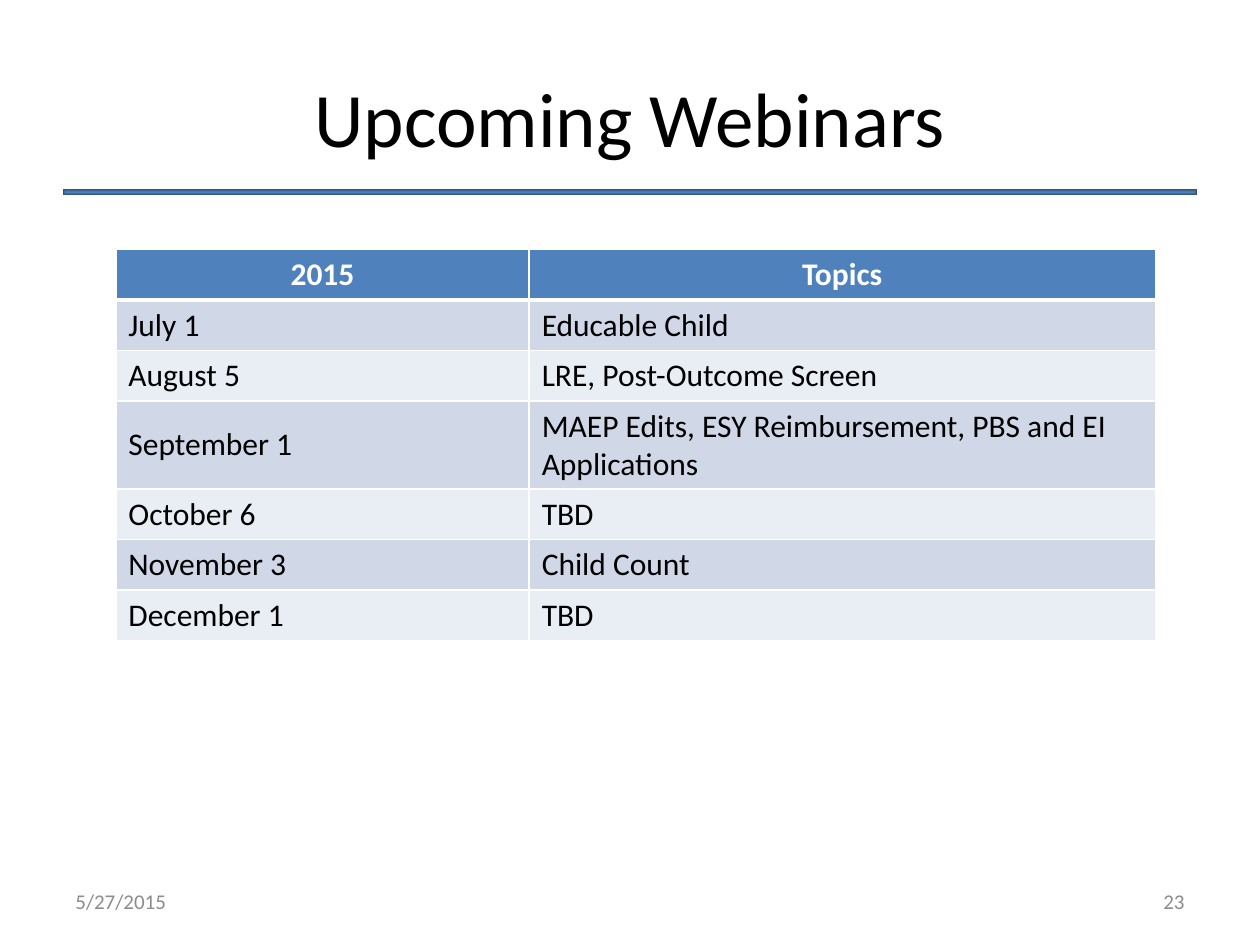
from lxml import etree
from pptx import Presentation
from pptx.dml.color import RGBColor
from pptx.enum import shapes, text
from pptx.oxml import ns
from pptx.util import Pt

FONT = "Calibri"
COLORS = {
    "white": "FFFFFF",
    "black": "000000",
    "footer": "8C8C8C",
    "blue": "4F81BD",
    "dark_blue": "2C4C74",
    "odd_row": "D0D8E8",
    "even_row": "E9EDF4",
}
SCHEDULE = [
    ("2015", "Topics"),
    ("July 1", "Educable Child"),
    ("August 5", "LRE, Post-Outcome Screen"),
    ("September 1", "MAEP Edits, ESY Reimbursement, PBS and EI Applications"),
    ("October 6", "TBD"),
    ("November 3", "Child Count"),
    ("December 1", "TBD"),
]
COLUMN_WIDTHS = (236.2, 357.8)
ROW_HEIGHT, TALL_ROW_HEIGHT, TALL_ROW = 27.4, 46.8, 3


def rgb(name):
    return RGBColor.from_string(COLORS[name])


def style_paragraph(paragraph, size, color, align, bold=False):
    paragraph.alignment = align
    font = paragraph.font
    font.name, font.size, font.bold = FONT, Pt(size), bold
    font.color.rgb = rgb(color)


def add_label(slide, wording, box, size, color, align):
    label = slide.shapes.add_textbox(*map(Pt, box))
    frame = label.text_frame
    frame.word_wrap = True
    frame.vertical_anchor = text.MSO_ANCHOR.MIDDLE
    frame.text = wording
    style_paragraph(frame.paragraphs[0], size, color, align)


def add_title_rule(slide):
    """Thin bar that shades from its centre out to darker edges."""
    rule = slide.shapes.add_shape(
        shapes.MSO_SHAPE.RECTANGLE, Pt(36), Pt(108), Pt(648), Pt(3.6))
    rule.shadow.inherit = False
    rule.line.fill.background()
    rule.fill.gradient()
    for stop, color, position in zip(
            rule.fill.gradient_stops, ("blue", "dark_blue"), (0, 1)):
        stop.color.rgb = rgb(color)
        stop.position = position
    gradient = rule.element.spPr.find(ns.qn("a:gradFill"))
    gradient.remove(gradient.find(ns.qn("a:lin")))
    shading = etree.SubElement(gradient, ns.qn("a:path"), path="shape")
    etree.SubElement(shading, ns.qn("a:fillToRect"),
                     l="50000", t="50000", r="50000", b="50000")


def add_borders(cell, top, bottom):
    """White borders; must be added before the cell's fill."""
    properties = cell._tc.get_or_add_tcPr()
    for side, width in (("L", 1), ("R", 1), ("T", top), ("B", bottom)):
        line = etree.SubElement(
            properties, ns.qn("a:ln" + side), w=str(Pt(width)))
        fill = etree.SubElement(line, ns.qn("a:solidFill"))
        etree.SubElement(fill, ns.qn("a:srgbClr"), val=COLORS["white"])


def add_schedule(slide):
    heights = [ROW_HEIGHT] * len(SCHEDULE)
    heights[TALL_ROW] = TALL_ROW_HEIGHT
    table = slide.shapes.add_table(
        len(SCHEDULE), len(COLUMN_WIDTHS), Pt(66.2), Pt(142.6),
        Pt(sum(COLUMN_WIDTHS)), Pt(sum(heights))).table
    for column, width in zip(table.columns, COLUMN_WIDTHS):
        column.width = Pt(width)
    for r, (entries, height) in enumerate(zip(SCHEDULE, heights)):
        table.rows[r].height = Pt(height)
        header = r == 0
        row_fill = "blue" if header else "odd_row" if r % 2 else "even_row"
        for c, entry in enumerate(entries):
            cell = table.cell(r, c)
            cell.text = entry
            if header or c == 0:
                cell.vertical_anchor = text.MSO_ANCHOR.MIDDLE
            add_borders(cell, top=3 if r == 1 else 1, bottom=3 if header else 1)
            cell.fill.solid()
            cell.fill.fore_color.rgb = rgb(row_fill)
            style_paragraph(
                cell.text_frame.paragraphs[0], 18,
                "white" if header else "black",
                text.PP_ALIGN.CENTER if header else text.PP_ALIGN.LEFT,
                bold=header)


def main():
    deck = Presentation()
    deck.slide_width, deck.slide_height = Pt(720), Pt(540)
    slide = deck.slides.add_slide(deck.slide_layouts[6])
    add_title_rule(slide)
    add_label(slide, "Upcoming Webinars", (36, 21.6, 648, 90),
              44, "black", text.PP_ALIGN.CENTER)
    add_schedule(slide)
    add_label(slide, "5/27/2015", (36, 500.5, 168, 28.8),
              12, "footer", text.PP_ALIGN.LEFT)
    add_label(slide, "23", (516, 500.5, 168, 28.8),
              12, "footer", text.PP_ALIGN.RIGHT)
    deck.save("out.pptx")


if __name__ == "__main__":
    main()
